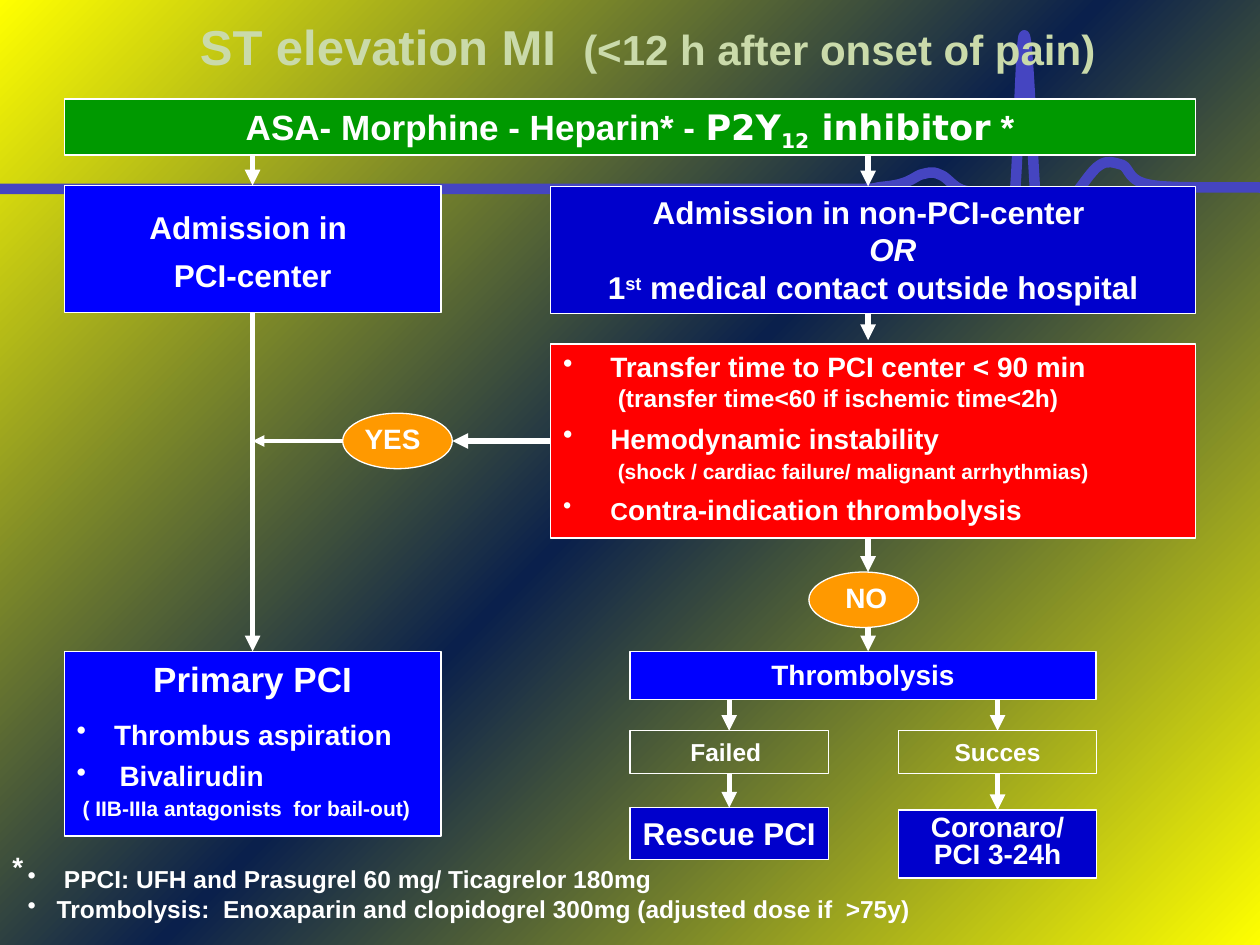
from copy import deepcopy
from dataclasses import dataclass

from lxml import etree
from pptx import Presentation
from pptx.dml.color import RGBColor
from pptx.enum.shapes import MSO_CONNECTOR, MSO_SHAPE
from pptx.enum.text import MSO_ANCHOR, PP_ALIGN
from pptx.oxml.ns import qn
from pptx.util import Pt

RECT, OVAL = MSO_SHAPE.RECTANGLE, MSO_SHAPE.OVAL
LEFT, CENTER = PP_ALIGN.LEFT, PP_ALIGN.CENTER
TOP, MIDDLE = MSO_ANCHOR.TOP, MSO_ANCHOR.MIDDLE
STRAIGHT = MSO_CONNECTOR.STRAIGHT
SIDE_TOP, SIDE_LEFT, SIDE_BOTTOM = 0, 1, 2

WHITE, BLUE, DARK_BLUE = "FFFFFF", "0000FF", "0000CC"
GREEN, RED, ORANGE = "009900", "FF0000", "FF9900"
YELLOW, NAVY, PULSE, TITLE = "FFFF00", "0A204C", "4545C1", "CADAAA"

# Heartbeat trace: start point, then Bezier curves (two controls and an end)
PULSE_START = (0, 108)
PULSE_CURVES = [
    ((73, 108), (352, 108), (436, 108)),
    ((520.6, 108), (491, 108), (506.2, 106.6)),
    ((521.3, 105.1), (522.7, 100.1), (527.8, 99.4)),
    ((533.5, 97.9), (534.2, 98.6), (537.8, 100.1)),
    ((541.4, 101.5), (544.3, 106.6), (550.1, 108.7)),
    ((555.8, 110.2), (566.6, 110.9), (571.7, 111.6)),
    ((576, 112.3), (576.7, 128.9), (579.6, 113.8)),
    ((581.8, 98.6), (583.2, 18), (585.4, 20.2)),
    ((588.2, 23), (590.4, 111.6), (593.3, 128.2)),
    ((595.4, 144.7), (596.9, 121.7), (600.5, 118.8)),
    ((603.4, 115.9), (608.4, 116.6), (612.7, 112.3)),
    ((617.8, 108), (623.5, 97.2), (628.6, 94.3)),
    ((632.9, 91.4), (636.5, 92.9), (641.5, 94.3)),
    ((645.8, 96.5), (644.4, 103.7), (658.1, 105.8)),
    ((671.8, 108), (709.2, 106.6), (722.9, 107.3)),
]


@dataclass
class Run:
    text: str
    size: float
    color: str = WHITE
    font: str = "Arial"
    bold: bool = True
    italic: bool = False
    baseline: int = 0


@dataclass
class Para:
    runs: list[Run]
    align: PP_ALIGN = LEFT
    before: float = 0
    spacing: float = 1.0
    margin: float = 0
    bullet: bool = False


@dataclass
class Box:
    x: float
    y: float
    w: float
    h: float
    paras: list[Para]
    fill: str | None = None
    shape: MSO_SHAPE | None = RECT
    anchor: MSO_ANCHOR = MIDDLE
    top: float = 2.4
    wrap: bool = True


def rgb(color: str) -> RGBColor:
    return RGBColor.from_string(color)


def label(text: str, size: float, **options) -> list[Para]:
    return [Para([Run(text, size)], CENTER, **options)]


def write_para(p, para: Para) -> None:
    pPr = p._p.get_or_add_pPr()
    pPr.set("marL", str(Pt(para.margin)))
    pPr.set("indent", str(-Pt(para.margin) if para.bullet else 0))
    if para.bullet:
        etree.SubElement(pPr, qn("a:buChar")).set("char", "•")
    formats = {"alignment": para.align, "space_before": Pt(para.before),
               "line_spacing": para.spacing}
    for name, value in formats.items():
        setattr(p, name, value)
    for run in para.runs:
        r = p.add_run()
        r.text = run.text
        formats = {"name": run.font, "size": Pt(run.size),
                   "bold": run.bold, "italic": run.italic}
        for name, value in formats.items():
            setattr(r.font, name, value)
        r.font.color.rgb = rgb(run.color)
        if run.baseline:
            r._r.get_or_add_rPr().set("baseline", str(run.baseline * 1000))


def draw_box(s, box: Box):
    """Draw a preset shape, or a plain text box when the shape is None."""
    place = [Pt(v) for v in (box.x, box.y, box.w, box.h)]
    if box.shape is None:
        sp = s.shapes.add_textbox(*place)
    else:
        sp = s.shapes.add_shape(box.shape, *place)
        sp.shadow.inherit = False
        sp.line.color.rgb = rgb(WHITE)
        sp.line.width = Pt(0.75)
        if box.fill:
            sp.fill.solid()
            sp.fill.fore_color.rgb = rgb(box.fill)
        else:
            sp.fill.background()
    tf = sp.text_frame
    formats = {"word_wrap": box.wrap, "vertical_anchor": box.anchor,
               "margin_left": Pt(7.2), "margin_right": Pt(7.2),
               "margin_top": Pt(box.top), "margin_bottom": Pt(3.6)}
    for name, value in formats.items():
        setattr(tf, name, value)
    for i, para in enumerate(box.paras):
        write_para(tf.add_paragraph() if i else tf.paragraphs[0], para)
    return sp


def draw_arrow(s, x1: float, y1: float, x2: float, y2: float,
               begin=None, end=None, width: float = 3) -> None:
    """Draw an arrow; begin and end are optional (shape, side) joints."""
    c = s.shapes.add_connector(STRAIGHT, Pt(x1), Pt(y1), Pt(x2), Pt(y2))
    if begin:
        c.begin_connect(*begin)
    if end:
        c.end_connect(*end)
    c.line.color.rgb = rgb(WHITE)
    c.line.width = Pt(width)
    spPr = c.element.find(qn("p:spPr"))
    etree.SubElement(spPr.find(qn("a:ln")), qn("a:tailEnd")).set("type", "triangle")
    etree.SubElement(spPr, qn("a:effectLst"))


def draw_background(s) -> None:
    fill = s.background.fill
    fill.gradient()
    fill.gradient_angle = 315
    stops = s.element.find(".//" + qn("a:gsLst"))
    stops.insert(1, deepcopy(stops[0]))
    for stop, position, color in zip(fill.gradient_stops, (0, 0.5, 1), (YELLOW, NAVY, YELLOW)):
        stop.position = position
        stop.color.rgb = rgb(color)


def draw_pulse(s) -> None:
    """Build the trace through all curve points, then turn each three into a Bezier."""
    points = [PULSE_START] + [point for curve in PULSE_CURVES for point in curve]
    points = [(round(x * 100), round(y * 100)) for x, y in points]
    builder = s.shapes.build_freeform(*points[0], scale=Pt(1) / 100)
    builder.add_line_segments(points[1:], close=False)
    sp = builder.convert_to_shape()
    outline = sp.element.find(".//" + qn("a:pathLst"))[0]
    segments = outline.findall(qn("a:lnTo"))
    for i in range(0, len(segments), 3):
        curve = etree.SubElement(outline, qn("a:cubicBezTo"))
        for segment in segments[i:i + 3]:
            curve.append(segment[0])
            outline.remove(segment)
    sp.shadow.inherit = False
    sp.fill.background()
    sp.line.color.rgb = rgb(PULSE)
    sp.line.width = Pt(6)


def main() -> None:
    prs = Presentation()
    prs.slide_width, prs.slide_height = Pt(720), Pt(540)
    s = prs.slides.add_slide(prs.slide_layouts[6])
    draw_background(s)
    draw_pulse(s)

    left_x, left_w, left_mid = 36.72, 215.28, 144.36
    right_x, right_w, right_mid = 314.64, 368.64, 496.08
    fail_x, success_x, branch_w = 360, 513.36, 113.4
    row_y, mid_y = 372.24, 252

    draw_box(s, Box(99.36, 0, 572.4, 52.56, [Para([
        Run("ST elevation MI  ", 28, TITLE),
        Run("(<12 h after onset of pain)", 24, TITLE)], margin=7.8)], shape=None, top=3.6))
    draw_box(s, Box(left_x, 56.52, 646.56, 32.04, [Para([
        Run("ASA- Morphine - Heparin* - ", 20), Run("P2Y", 20, font="DejaVu Sans"),
        Run("12", 20, font="DejaVu Sans", baseline=-25),
        Run(" inhibitor", 20, font="DejaVu Sans"), Run(" *", 20)], CENTER)], GREEN, top=6))
    pci = draw_box(s, Box(left_x, 106, left_w, 72.72, label("Admission in ", 18)
                          + label("PCI-center", 18, before=6), BLUE, anchor=TOP, top=12.8))
    primary = draw_box(s, Box(left_x, row_y, left_w, 105.48, label("Primary PCI", 20) + [
        Para([Run("Thrombus aspiration", 16)], before=10, margin=21.4, bullet=True),
        Para([Run("Bivalirudin", 16)], before=4.6, margin=24.5, bullet=True),
        Para([Run("( IIB-IIIa antagonists  for bail-out)", 12)], before=2, margin=3.4),
    ], BLUE, anchor=TOP, top=3.6))
    draw_box(s, Box(right_x, 106.56, right_w, 72.72, label("Admission in non-PCI-center ", 18) + [
        Para([Run("OR", 18, italic=True)], margin=175),
        Para([Run("1", 18), Run("st", 18, baseline=30),
              Run(" medical contact outside hospital", 18)], CENTER),
    ], DARK_BLUE, anchor=TOP, top=3.6))
    criteria = draw_box(s, Box(right_x, 196.56, right_w, 110.88, [
        Para([Run("Transfer time to PCI center < 90 min", 16)], margin=27, bullet=True),
        Para([Run("(transfer time<60 if ischemic time<2h)", 14)], margin=31.3),
        Para([Run("Hemodynamic instability", 16)], before=5, margin=27, bullet=True),
        Para([Run("(shock / cardiac failure/ malignant arrhythmias)", 12)], before=1.8, margin=31.3),
        Para([Run("C", 14), Run("ontra-indication thrombolysis", 16)], before=5, margin=27, bullet=True),
    ], RED, anchor=TOP, top=3.4))
    for text, x, y, indent in (("YES", 195.84, 236.16, 0), ("NO", 462.24, 326.88, 8.3)):
        draw_box(s, Box(x, y, 62.64, 31.68, [], ORANGE, OVAL))
        draw_box(s, Box(x + 5.4, y + 1.8, 46.4, 26.64, [Para([Run(text, 16)], margin=indent)],
                        shape=None))
    draw_box(s, Box(fail_x, row_y, 266.4, 27.36, label("Thrombolysis", 16), BLUE))
    failed, success = (draw_box(s, Box(x, 417.6, branch_w, 24.48, label(text, 14)))
                       for text, x in (("Failed ", fail_x), ("Succes", success_x)))
    rescue = draw_box(s, Box(fail_x, 461.52, branch_w, 29.52,
                             label("Rescue PCI", 18), DARK_BLUE, wrap=False))
    coronaro = draw_box(s, Box(success_x, 462.96, branch_w, 38.88,
                               label("Coronaro/", 16, spacing=0.8)
                               + label("PCI 3-24h", 16, spacing=0.8),
                               DARK_BLUE, anchor=TOP, top=3.6))
    draw_box(s, Box(8.64, 490.32, 539.28, 41.04, [
        Para([Run("PPCI: UFH and Prasugrel 60 mg/ Ticagrelor 180mg", 14)], margin=20.8, bullet=True),
        Para([Run("Trombolysis:  Enoxaparin and clopidogrel 300mg (adjusted dose if  >75y)", 14)],
             before=0.6, margin=16.7, bullet=True),
    ], shape=None, anchor=TOP, top=3.4))
    draw_box(s, Box(0, 481.68, 22.32, 26.64, [Para([Run("*", 16)])], shape=None, top=3.6))

    draw_arrow(s, left_mid, 88.56, left_mid, 106, end=(pci, SIDE_TOP))
    draw_arrow(s, left_mid, 179, left_mid, row_y, (pci, SIDE_BOTTOM), (primary, SIDE_TOP))
    for y1, y2 in ((88.56, 106.56), (179.28, 194.4), (307.44, 326.88), (358.56, row_y)):
        draw_arrow(s, right_mid, y1, right_mid, y2)
    draw_arrow(s, right_x, mid_y, 258.48, mid_y, begin=(criteria, SIDE_LEFT))
    draw_arrow(s, 195.84, mid_y, left_mid, mid_y, width=2.25)
    for x, outcome, action in ((fail_x, failed, rescue), (success_x, success, coronaro)):
        mid = x + branch_w / 2
        draw_arrow(s, mid, 399.6, mid, 417.6, end=(outcome, SIDE_TOP))
        draw_arrow(s, mid, 442, mid, 462, (outcome, SIDE_BOTTOM), (action, SIDE_TOP))

    prs.save("out.pptx")


if __name__ == "__main__":
    main()
